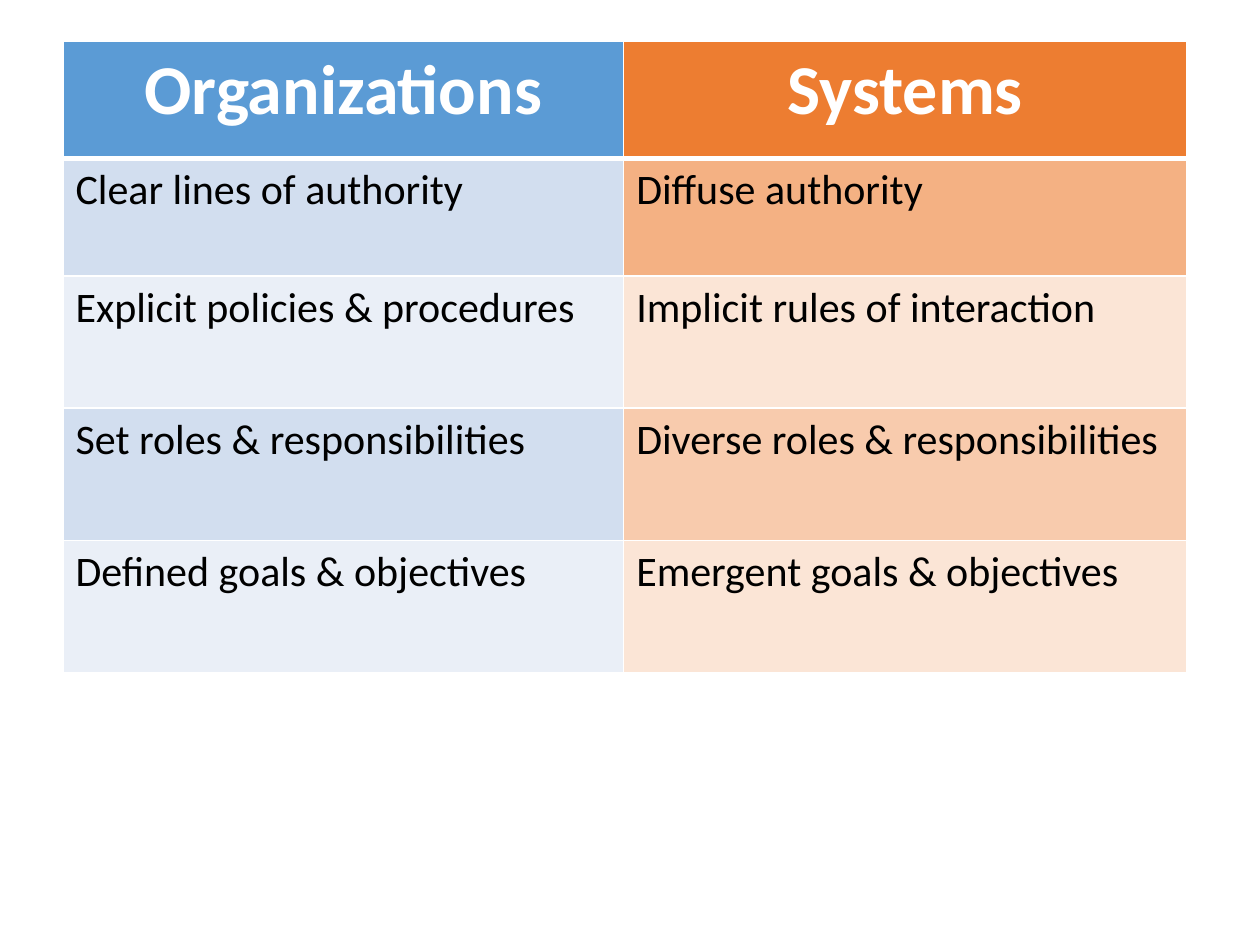
from dataclasses import dataclass

import pptx
import pptx.dml.color
import pptx.enum.text
import pptx.util
from lxml import etree
from pptx.oxml.ns import qn


@dataclass(frozen=True)
class Theme:
    font: str = "Calibri"
    heading_size: int = 40
    body_size: int = 24
    heading_color: str = "FFFFFF"
    body_color: str = "000000"
    border_color: str = "FFFFFF"
    border_width: float = 1
    heading_rule_width: float = 3
    # One row of fills per table row: organizations, systems
    fills: tuple = (
        ("5B9BD5", "ED7D31"),
        ("D2DEEF", "F4B183"),
        ("EAEFF7", "FBE5D6"),
        ("D2DEEF", "F8CBAD"),
        ("EAEFF7", "FBE5D6"),
    )


THEME = Theme()
COMPARISON = (
    ("Organizations", "Systems"),
    ("Clear lines of authority", "Diffuse authority"),
    ("Explicit policies & procedures", "Implicit rules of interaction"),
    ("Set roles & responsibilities", "Diverse roles & responsibilities"),
    ("Defined goals & objectives", "Emergent goals & objectives"),
)
COLUMN_WIDTHS = (4.45, 4.47)
ROW_HEIGHTS = (0.93, 0.93, 1.05, 1.05, 1.05)


def rgb(color):
    return pptx.dml.color.RGBColor.from_string(color)


def set_borders(cell, row):
    """Rule every side, with a heavier line between heading and body."""
    heavy_side = {0: "lnB", 1: "lnT"}.get(row)
    properties = cell._tc.get_or_add_tcPr()
    for side in ("lnL", "lnR", "lnT", "lnB"):
        width = THEME.heading_rule_width if side == heavy_side else THEME.border_width
        line = etree.SubElement(properties, qn(f"a:{side}"), w=str(pptx.util.Pt(width)))
        fill = etree.SubElement(line, qn("a:solidFill"))
        etree.SubElement(fill, qn("a:srgbClr"), val=THEME.border_color)


def write_cell(cell, text, is_heading):
    paragraph = cell.text_frame.paragraphs[0]
    if is_heading:
        paragraph.alignment = pptx.enum.text.PP_ALIGN.CENTER
    run = paragraph.add_run()
    run.text = text
    run.font.name = THEME.font
    run.font.bold = is_heading
    run.font.size = pptx.util.Pt(THEME.heading_size if is_heading else THEME.body_size)
    run.font.color.rgb = rgb(THEME.heading_color if is_heading else THEME.body_color)


def add_comparison_table(slide, left, top):
    table = slide.shapes.add_table(
        len(COMPARISON), len(COLUMN_WIDTHS),
        pptx.util.Inches(left), pptx.util.Inches(top),
        pptx.util.Inches(sum(COLUMN_WIDTHS)), pptx.util.Inches(sum(ROW_HEIGHTS)),
    ).table
    for column, width in zip(table.columns, COLUMN_WIDTHS):
        column.width = pptx.util.Inches(width)
    for row, height in zip(table.rows, ROW_HEIGHTS):
        row.height = pptx.util.Inches(height)
    for row, (texts, fills) in enumerate(zip(COMPARISON, THEME.fills)):
        for column, (text, fill) in enumerate(zip(texts, fills)):
            cell = table.cell(row, column)
            set_borders(cell, row)
            cell.fill.solid()
            cell.fill.fore_color.rgb = rgb(fill)
            write_cell(cell, text, is_heading=row == 0)


def main():
    presentation = pptx.Presentation()
    presentation.slide_width = pptx.util.Inches(10)
    presentation.slide_height = pptx.util.Inches(7.5)
    slide = presentation.slides.add_slide(presentation.slide_layouts[6])
    add_comparison_table(slide, left=0.5, top=0.33)
    presentation.save("out.pptx")


if __name__ == "__main__":
    main()
